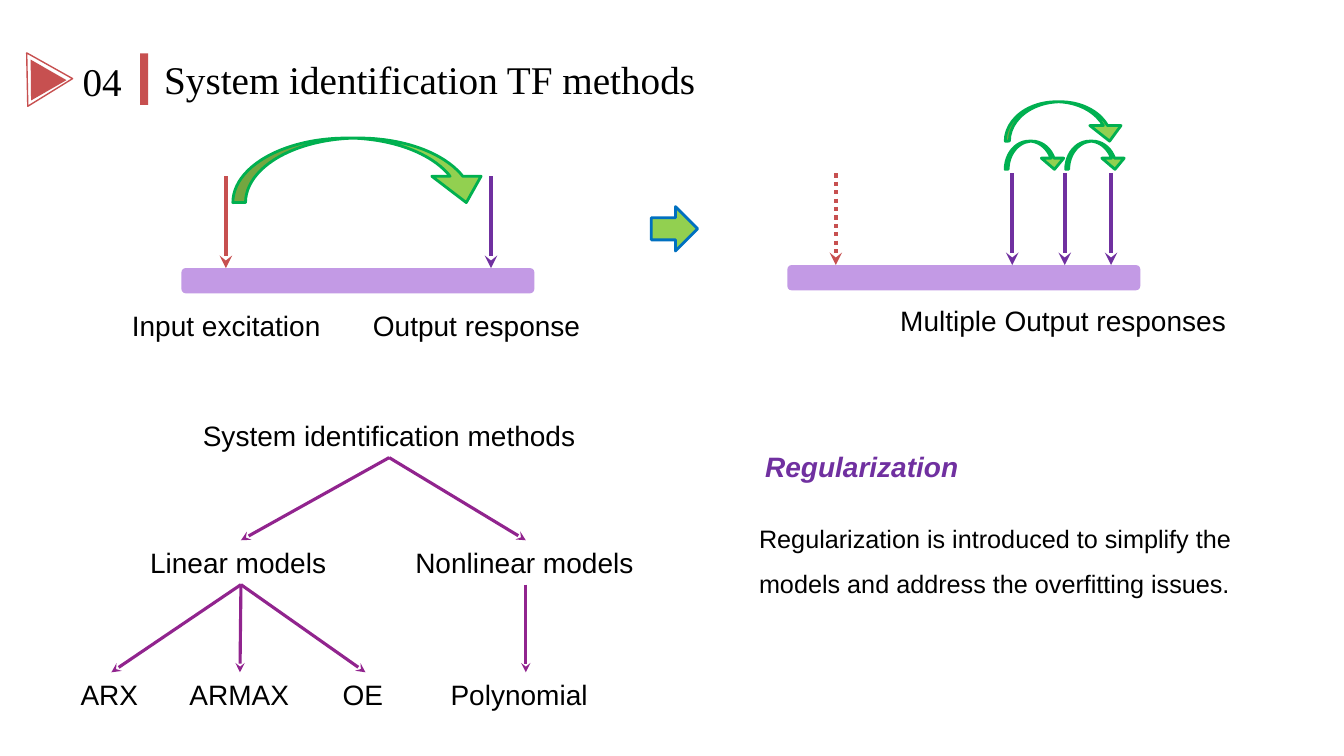
from collections import namedtuple

from lxml.etree import SubElement
from pptx import Presentation
from pptx.dml.color import RGBColor
from pptx.enum.dml import MSO_LINE
from pptx.enum.shapes import MSO_CONNECTOR, MSO_SHAPE
from pptx.enum.text import MSO_AUTO_SIZE, PP_ALIGN
from pptx.oxml.ns import qn
from pptx.util import Inches, Pt

COLORS = {
    "text": "000000",
    "red": "C75050",
    "purple": "7030A0",
    "branch": "91248E",
    "beam": "C39AE5",
    "lime": "92D050",
    "green": "00B050",
    "blue": "0070C0",
}
COLUMNS, ROWS = 133.3, 75  # square grid cells
CELL = Inches(0.1)
BOTTOM, TOP = 2, 0  # connection sites
LABEL_HEIGHT = 4.4

Box = namedtuple("Box", "left top width height")


def cells(*counts):
    return [round(count * CELL) for count in counts]


def color(name):
    return RGBColor.from_string(COLORS[name])


def inside(box, left, top, width, height):
    """Turn an offset within a region into a box on the slide."""
    return Box(box.left + left, box.top + top, width, height)


def add_figure(slide, kind, box, fill=None, line=None, weight=2, rotation=0):
    shape = slide.shapes.add_shape(kind, *cells(*box))
    shape.shadow.inherit = False
    shape.rotation = rotation
    if fill:
        shape.fill.solid()
        shape.fill.fore_color.rgb = color(fill)
    else:
        shape.fill.background()
    if line:
        shape.line.color.rgb = color(line)
        shape.line.width = Pt(weight)
    else:
        shape.line.fill.background()
    return shape


def add_label(slide, box, text, size=20, font="Arial", fill="text",
              emphasis=False, align=PP_ALIGN.LEFT, spacing=None):
    label = slide.shapes.add_textbox(*cells(*box))
    frame = label.text_frame
    frame.word_wrap = True
    frame.auto_size = MSO_AUTO_SIZE.SHAPE_TO_FIT_TEXT
    paragraph = frame.paragraphs[0]
    paragraph.alignment = align
    paragraph.line_spacing = spacing
    run = paragraph.add_run()
    run.text = text
    run.font.name = font
    run.font.size = Pt(size)
    run.font.color.rgb = color(fill)
    if emphasis:
        run.font.bold = run.font.italic = True
    return label


def add_arrow(slide, start, end, fill, weight, dotted=False):
    arrow = slide.shapes.add_connector(
        MSO_CONNECTOR.STRAIGHT, *cells(*start, *end))
    arrow.line.color.rgb = color(fill)
    arrow.line.width = Pt(weight)
    if dotted:
        arrow.line.dash_style = MSO_LINE.ROUND_DOT
    SubElement(arrow.line._get_or_add_ln(), qn("a:tailEnd"), type="stealth")
    SubElement(arrow._element.spPr, qn("a:effectLst"))
    return arrow


def add_branch(slide, parent, child):
    arrow = add_arrow(slide, (0, 0), (1, 1), "branch", 2.25)
    arrow.begin_connect(parent, BOTTOM)
    arrow.end_connect(child, TOP)


def add_header(slide, box, number, title):
    add_figure(slide, MSO_SHAPE.ISOSCELES_TRIANGLE,
               inside(box, 0.4, 0.6, 5.3, 4.5), line="red", weight=1, rotation=88.8)
    add_figure(slide, MSO_SHAPE.ISOSCELES_TRIANGLE,
               inside(box, 0, 1.7, 4.1, 3.5), fill="red", rotation=209.8)
    add_figure(slide, MSO_SHAPE.RECTANGLE, inside(box, 12, 0.3, 0.8, 5.1), fill="red")
    for left, top, width, text in ((5.3, 0.2, 7.5, number), (13.4, 0, 56.2, title)):
        add_label(slide, inside(box, left, top, width, box.height), text,
                  28, "Times New Roman")


def add_beam(slide, box, forces, hops, bend, labels):
    """Draw a beam along the box's foot, with forces pressing down on it."""
    thickness = 2.5
    surface = box.height - thickness
    add_figure(slide, MSO_SHAPE.ROUNDED_RECTANGLE,
               inside(box, 0, surface, box.width, thickness), fill="beam")
    for offset, fill, dotted in forces:
        x = box.left + offset
        add_arrow(slide, (x, box.top), (x, box.top + surface), fill, 3, dotted)
    for hop in hops:
        curve = add_figure(slide, MSO_SHAPE.CURVED_DOWN_ARROW,
                           inside(box, *hop), "lime", "green")
        for index, value in enumerate(bend):
            curve.adjustments[index] = value
    for left, top, width, text in labels:
        add_label(slide, inside(box, left, top, width, LABEL_HEIGHT), text)


def add_method_tree(slide, box, root, models):
    """Place a root, its models and their methods on three levels."""
    model_row, method_row = 12.6, box.height - LABEL_HEIGHT

    def add_node(left, row, width, text, align=PP_ALIGN.LEFT):
        node_box = inside(box, left, row, width, LABEL_HEIGHT)
        return add_label(slide, node_box, text, align=align)

    root_node = add_node(10.4, 0, 42.4, root, PP_ALIGN.CENTER)
    for left, width, text, methods in models:
        model = add_node(left, model_row, width, text)
        add_branch(slide, root_node, model)
        for method_left, method_width, method in methods:
            add_branch(slide, model,
                       add_node(method_left, method_row, method_width, method))


def add_note(slide, box, heading, body):
    add_label(slide, inside(box, 0.6, 0, 22.3, LABEL_HEIGHT), heading,
              fill="purple", emphasis=True)
    add_label(slide, inside(box, 0, 5.8, box.width, box.height - 5.8), body,
              18, spacing=1.5)


def build():
    presentation = Presentation()
    presentation.slide_width, presentation.slide_height = cells(COLUMNS, ROWS)
    slide = presentation.slides.add_slide(presentation.slide_layouts[6])

    add_header(slide, Box(1.9, 5, 69.6, 5.7), "04", "System identification TF methods")
    add_beam(
        slide, Box(18, 17.5, 35, 11.6),
        forces=[(4.4, "red", False), (30.7, "purple", False)],
        hops=[(5.1, -3.8, 25.6, 6.4)],
        bend=(0.197, 0.763, 0.408),
        labels=[(-5.9, 12.6, 22, "Input excitation"),
                (18, 12.6, 25.5, "Output response")])
    add_figure(slide, MSO_SHAPE.RIGHT_ARROW, Box(64.6, 20.5, 4.6, 4.4), "lime", "blue")
    add_beam(
        slide, Box(78.1, 17.2, 35, 11.6),
        forces=[(4.8, "red", True)]
        + [(offset, "purple", False) for offset in (22.3, 27.5, 32.1)],
        hops=[(21.6, -3.2, 6, 2.8), (27.6, -3.2, 6, 2.8), (21.6, -7.1, 11.9, 3.9)],
        bend=(0.106, 0.794, 0.396),
        labels=[(10.2, 12.4, 34.6, "Multiple Output responses")])
    add_method_tree(
        slide, Box(7, 41, 57.1, 30.1), "System identification methods",
        [(6.9, 20, "Linear models",
          [(0, 8.1, "ARX"), (10.8, 12, "ARMAX"), (26, 6.5, "OE")]),
         (33.2, 23.9, "Nonlinear models", [(36.7, 16.9, "Polynomial")])])
    add_note(
        slide, Box(74.3, 44.1, 55.9, 18.9), "Regularization",
        "Regularization is introduced to simplify the models "
        "and address the overfitting issues.")

    presentation.save("out.pptx")


if __name__ == "__main__":
    build()
